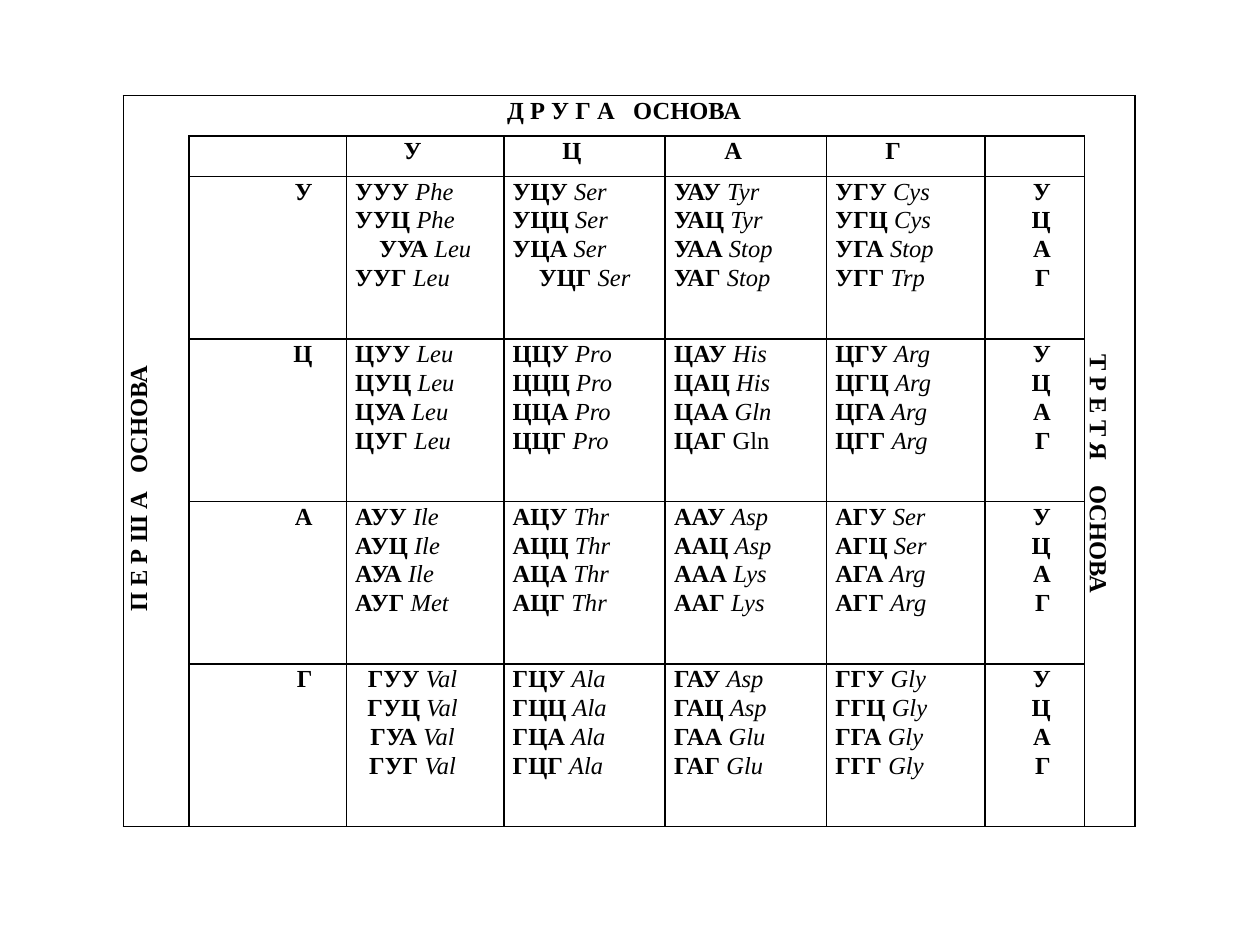
from lxml.etree import SubElement
from pptx import Presentation
from pptx.dml.color import RGBColor
from pptx.enum.text import PP_ALIGN
from pptx.oxml.ns import qn
from pptx.util import Inches, Pt

BASES = "УЦАГ"
# One row per first base, one group per second base, one word per third base
AMINO = [
    ["Phe Phe Leu Leu", "Ser Ser Ser Ser", "Tyr Tyr Stop Stop", "Cys Cys Stop Trp"],
    ["Leu Leu Leu Leu", "Prо Pro Pro Pro", "His His Gln Gln", "Arg Arg Arg Arg"],
    ["Ile Ile Ile Met", "Thr Thr Thr Thr", "Asp Asp Lys Lys", "Ser Ser Arg Arg"],
    ["Val Val Val Val", "Ala Ala Ala Ala", "Asp Asp Glu Glu", "Gly Gly Gly Gly"],
]
COLS = [0.52, 1.25, 1.25, 1.28, 1.28, 1.26, 0.79, 0.4]
ROWS = [0.32, 0.32] + [1.29] * 4
MID = ("УУА", "УЦГ")
PLAIN = "ЦАГ"
NO_STYLE = "{2D5ABB26-0587-4C30-8999-92F81FD0307C}"


def color(code):
    return RGBColor.from_string(code)


class Deck:
    def __init__(self):
        self.font, self.size, self.ink = "Times New Roman", Pt(14), "000000"
        self.prs = Presentation()
        self.prs.slide_width, self.prs.slide_height = Inches(10), Inches(7.5)
        self.slide = self.prs.slides.add_slide(self.prs.slide_layouts[6])

    def table(self, left, top, cols, rows):
        frame = self.slide.shapes.add_table(
            len(rows), len(cols), Inches(left), Inches(top),
            Inches(sum(cols)), Inches(sum(rows)))
        grid = frame.table
        grid.first_row = grid.horz_banding = False
        grid._tbl.tblPr.find(qn("a:tableStyleId")).text = NO_STYLE
        for col, width in zip(grid.columns, cols):
            col.width = Inches(width)
        for row, height in zip(grid.rows, rows):
            row.height = Inches(height)
        return grid

    def frame(self, cell, sides):
        """Set the insets and rule the named sides, given in the order LRTB."""
        cell.margin_left = cell.margin_right = Inches(0.07)
        cell.margin_top = cell.margin_bottom = 0
        props = cell._tc.get_or_add_tcPr()
        for side in sides:
            line = SubElement(props, qn("a:ln" + side), w=str(Pt(1)))
            fill = SubElement(line, qn("a:solidFill"))
            SubElement(fill, qn("a:srgbClr"), val=self.ink)
        cell.fill.background()

    def text(self, cell, lines, align=PP_ALIGN.LEFT, right=0, left=0):
        """Add one paragraph to the cell for each list of (words, bold, italic)."""
        body = cell.text_frame
        for runs in lines:
            para = body.paragraphs[0]
            if para.runs:
                para = body.add_paragraph()
            para.alignment, para.line_spacing = align, 1.07
            props = para._p.get_or_add_pPr()
            props.set("marL", str(Inches(left)))
            props.set("marR", str(Inches(right)))
            for words, bold, slant in runs:
                run = para.add_run()
                run.text = words
                font = run.font
                font.name, font.size = self.font, self.size
                font.bold, font.italic = bold, slant
                font.color.rgb = color(self.ink)

    def label(self, cell, words, align=PP_ALIGN.CENTER, left=0):
        self.text(cell, [[(word, True, False)] for word in words],
                  align, 0.2, left)

    def turn(self, cell, way, words):
        cell._tc.get_or_add_tcPr().set("vert", way)
        self.label(cell, [words], left=0.08)

    def codons(self, cell, pair, names):
        for base, name in zip(BASES, names.split()):
            code = pair + base
            val = pair == "ГУ"
            mid = val or code in MID
            self.text(cell, [[(code + " ", True, False),
                              (name, False, code != PLAIN)]],
                      PP_ALIGN.CENTER if mid else PP_ALIGN.LEFT,
                      0.2 if val else 0)


def sides(row, col):
    last = len(COLS) - 1
    if row == 0:
        return {0: "LT", last: "RT"}.get(col, "TB")
    return "LRB" if col in (0, last) else "LRTB"


def main():
    deck = Deck()
    grid = deck.table(0.98, 0.76, COLS, ROWS)
    for row in range(len(ROWS)):
        for col in range(len(COLS)):
            deck.frame(grid.cell(row, col), sides(row, col))

    grid.cell(0, 1).merge(grid.cell(0, 6))
    for col in (0, 7):
        grid.cell(1, col).merge(grid.cell(5, col))
    deck.label(grid.cell(0, 1), ["Д Р У Г А   ОСНОВА"])
    deck.turn(grid.cell(1, 0), "vert270", "П Е Р Ш А   ОСНОВА")
    deck.turn(grid.cell(1, 7), "vert", "Т Р Е Т Я    ОСНОВА")

    for col, base in enumerate(BASES, 2):
        deck.label(grid.cell(1, col), [base])
    for row, (first, groups) in enumerate(zip(BASES, AMINO), 2):
        deck.label(grid.cell(row, 1), [first], PP_ALIGN.RIGHT)
        for col, (second, names) in enumerate(zip(BASES, groups), 2):
            deck.codons(grid.cell(row, col), first + second, names)
        deck.label(grid.cell(row, 6), BASES, PP_ALIGN.RIGHT)
    deck.prs.save("out.pptx")


if __name__ == "__main__":
    main()
